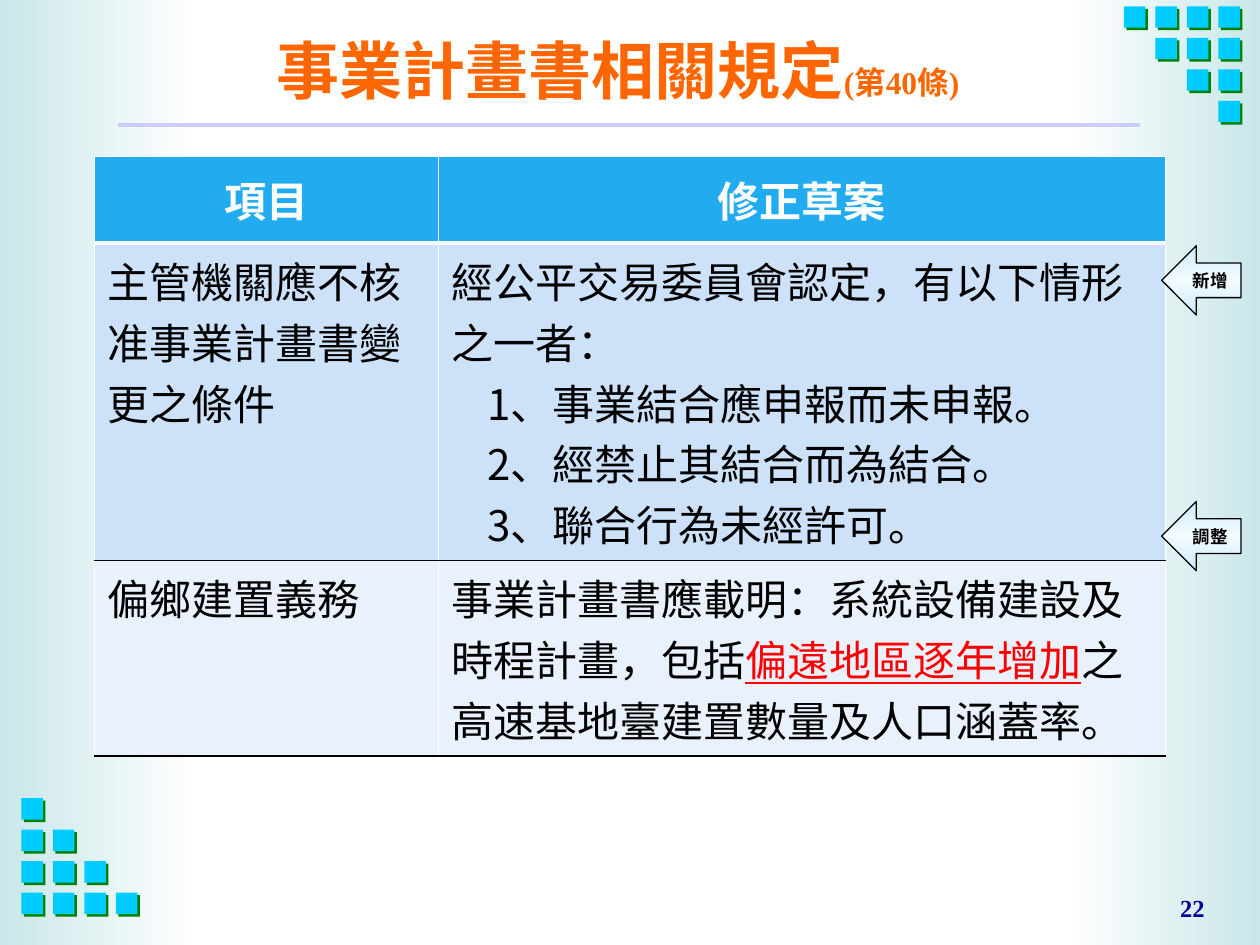
"""Build the slide on business plan rules (Article 40) on a grid of 40 columns by 30 rows."""
from copy import deepcopy

from lxml import etree
from pptx import Presentation, util as u
from pptx.dml.color import RGBColor
from pptx.enum import shapes, text
from pptx.oxml.ns import qn

rgb = RGBColor.from_string
CELL = u.Inches(0.25)
SANS, SERIF = "Noto Sans CJK TC", "Times New Roman"
LEFT, CENTER, RIGHT = text.PP_ALIGN.LEFT, text.PP_ALIGN.CENTER, text.PP_ALIGN.RIGHT
RECTANGLE, ARROW = shapes.MSO_SHAPE.RECTANGLE, shapes.MSO_SHAPE.LEFT_ARROW


def grid(*units):
    """Turn grid units into slide lengths."""
    return [round(unit * CELL) for unit in units]


def add_gradient(kind, box, colors, angle):
    """Add a shape filled with evenly spaced gradient colours."""
    shape = slide.shapes.add_shape(kind, *grid(*box))
    shape.shadow.inherit = False
    shape.line.fill.background()
    shape.fill.gradient()
    shape.fill.gradient_angle = angle
    stop_list = shape._element.spPr.find(".//" + qn("a:gsLst"))
    while len(stop_list) < len(colors):
        stop_list.append(deepcopy(stop_list[0]))
    for index, stop in enumerate(shape.fill.gradient_stops):
        stop.position = index / (len(colors) - 1)
        stop.color.rgb = rgb(colors[index])
    return shape


presentation = Presentation()
presentation.slide_width, presentation.slide_height = grid(40, 30)
slide = presentation.slides.add_slide(presentation.slide_layouts[6])
styles = []

add_gradient(RECTANGLE, (33.88, 0, 6.12, 30), ["FFFFFF", "C9E7E9"], 0)
add_gradient(RECTANGLE, (0, 0, 6.28, 30), ["C9E7E9", "FFFFFF"], 0)

rule = slide.shapes.add_connector(shapes.MSO_CONNECTOR.STRAIGHT, *grid(3.76, 3.96, 36.2, 3.96))
rule.line.color.rgb = rgb("CCCCFF")
rule.line.width = u.Pt(2.25)
etree.SubElement(rule._element.spPr, qn("a:effectLst"))

lower_left = [(0.68 + column, 25.34 + row) for column in range(4) for row in range(column, 4)]
upper_right = [(35.68 + column, 0.2 + row) for column in range(4) for row in range(column + 1)]
for left, top in lower_left + upper_right:
    for offset, color in ((0.08, "008000"), (0, "00CCFF")):
        square = slide.shapes.add_shape(RECTANGLE, *grid(left + offset, top + offset, 0.68, 0.68))
        square.shadow.inherit = False
        square.fill.solid()
        square.fill.fore_color.rgb = rgb(color)
        square.line.fill.background()

for box, words, size, color, alignment in (
    ((30.32, 28.32, 8.32, 1), ["22"], 14, "000099", RIGHT),
    ((3.8, 0.52, 31.64, 3.36), ["事業計畫書相關規定", "(第40條)"], 36, "FF6600", CENTER),
):
    frame = slide.shapes.add_textbox(*grid(*box)).text_frame
    frame.word_wrap = True
    frame.vertical_anchor = text.MSO_ANCHOR.MIDDLE
    paragraph = frame.paragraphs[0]
    for word in words:
        paragraph.add_run().text = word
    styles.append((paragraph, size, color, True, SERIF, alignment))
paragraph.runs[1].font.size = u.Pt(18)

rows = [
    [["項目"], ["修正草案"]],
    [["主管機關應不核准事業計畫書變更之條件"],
     ["經公平交易委員會認定，有以下情形之一者：", "1、事業結合應申報而未申報。",
      "2、經禁止其結合而為結合。", "3、聯合行為未經許可。"]],
    [["偏鄉建置義務"],
     ["事業計畫書應載明：系統設備建設及時程計畫，包括|偏遠地區逐年增加|之高速基地臺建置數量及人口涵蓋率。"]],
]
row_fills = ["23ABEF", "CDE2F9", "E8F1FC"]
row_edges = [("FFFFFF", 1), ("FFFFFF", 3), ("000000", 1), ("000000", 1)]
side_edge = ("FFFFFF", 1)
table = slide.shapes.add_table(3, 2, *grid(3, 4.96, 34, 19.04)).table
for column, width in zip(table.columns, grid(10.92, 23.08)):
    column.width = width
for row, height in zip(table.rows, grid(2.76, 10.08, 6.2)):
    row.height = height

for row_index, row in enumerate(rows):
    header = row_index == 0
    for column_index, lines in enumerate(row):
        cell = table.cell(row_index, column_index)
        edges = (side_edge, side_edge, row_edges[row_index], row_edges[row_index + 1])
        for side, (color, width) in zip("LRTB", edges):
            border = etree.SubElement(cell._tc.get_or_add_tcPr(), qn(f"a:ln{side}"), w=str(u.Pt(width)))
            etree.SubElement(etree.SubElement(border, qn("a:solidFill")), qn("a:srgbClr"), val=color)
        cell.fill.solid()
        cell.fill.fore_color.rgb = rgb(row_fills[row_index])
        cell.vertical_anchor = text.MSO_ANCHOR.MIDDLE if header else text.MSO_ANCHOR.TOP
        for line_index, line in enumerate(lines):
            frame = cell.text_frame
            paragraph = frame.add_paragraph() if line_index else frame.paragraphs[0]
            if line_index:
                paragraph._p.get_or_add_pPr().set("marL", str(u.Inches(0.29)))
            for part_index, part in enumerate(line.split("|")):
                run = paragraph.add_run()
                run.text = part
                if part_index == 1:
                    run.font.color.rgb = rgb("FF0000")
                    run.font.underline = True
            styles.append((paragraph, 24, "FFFFFF" if header else "000000", header, SANS,
                           CENTER if header else LEFT))

for top, label in ((7.8, "新增"), (15.92, "調整")):
    arrow = add_gradient(ARROW, (36.88, top, 2.52, 2.2), ["CCECFF", "F4FBFF", "CCECFF"], 90)
    arrow.line.color.rgb = rgb("000000")
    arrow.line.width = u.Pt(0.75)
    frame = arrow.text_frame
    frame.word_wrap = False
    frame.vertical_anchor = text.MSO_ANCHOR.MIDDLE
    frame.text = label
    styles.append((frame.paragraphs[0], 10, "000000", True, SANS, CENTER))

for paragraph, size, color, bold, name, alignment in styles:
    paragraph.alignment = alignment
    font = paragraph.font
    font.size, font.bold, font.name = u.Pt(size), bold, name
    font.color.rgb = rgb(color)
    etree.SubElement(paragraph._p.pPr.find(qn("a:defRPr")), qn("a:ea"), typeface=SANS)

presentation.save("out.pptx")
